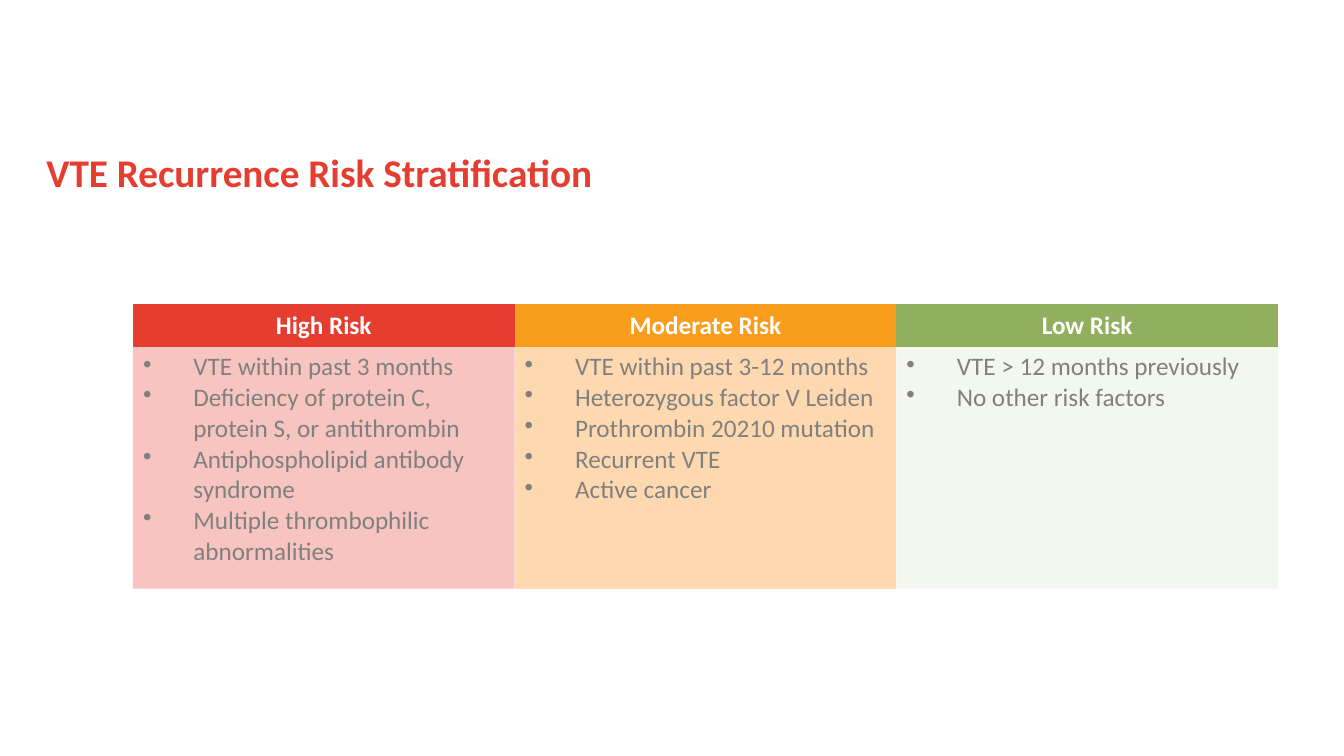
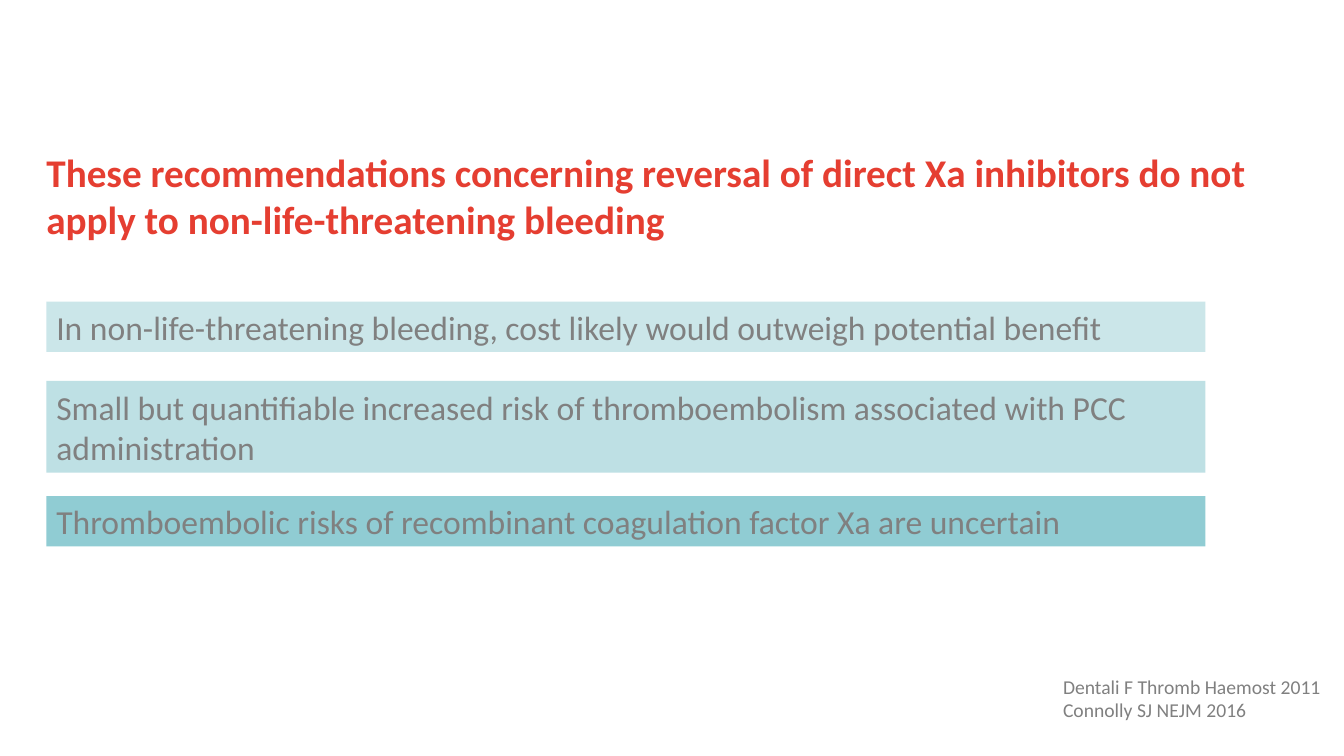
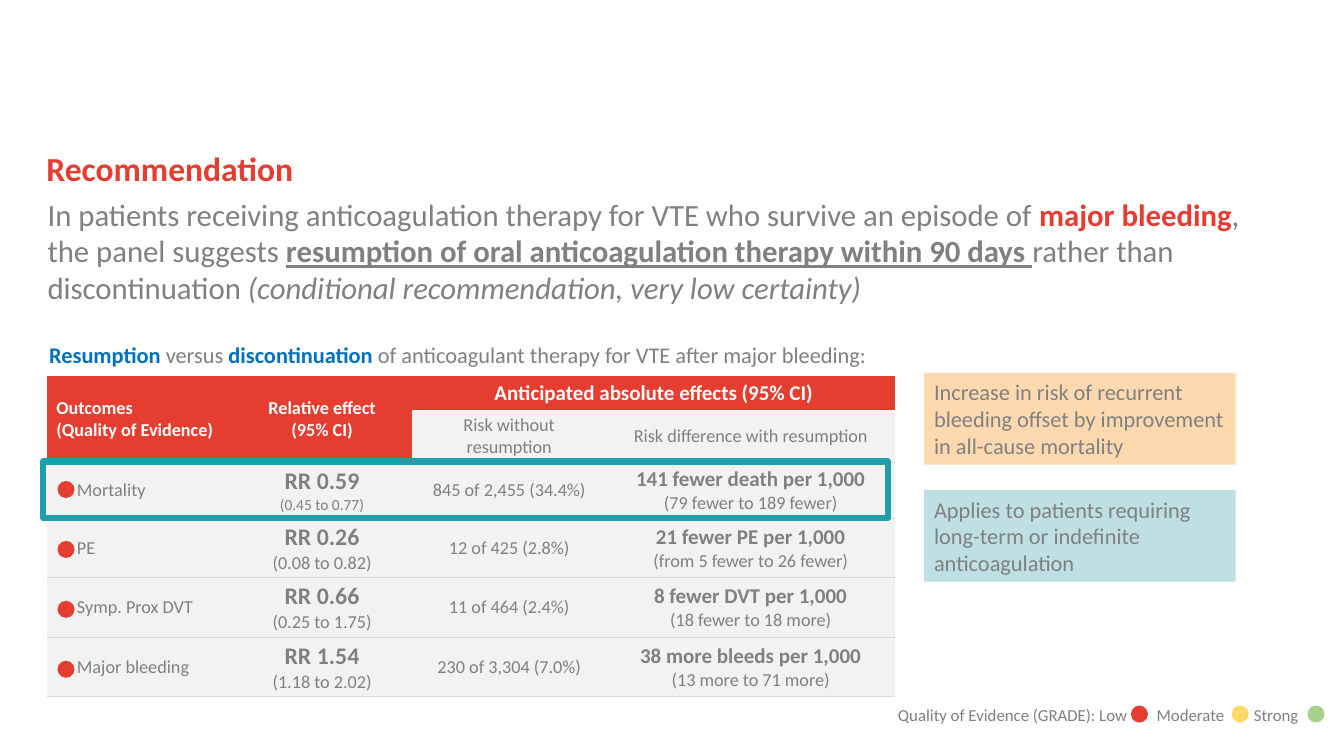
import collections
import dataclasses

import lxml.etree
import pptx
import pptx.dml.color
import pptx.enum.shapes
import pptx.enum.text
import pptx.oxml.ns
import pptx.util

Cm = pptx.util.Cm
Box = collections.namedtuple("Box", "left top width height")
Paragraph = collections.namedtuple(
    "Paragraph", "runs centred indent hanging bullet tabs", defaults=(False, 0, 0, None, ()))


@dataclasses.dataclass(frozen=True)
class Theme:
    """Colours, type sizes and shared measures of the deck."""
    font: str = "Calibri"
    red: str = "E53E31"
    orange: str = "F99D1C"
    green: str = "91AF5F"
    pink: str = "E63E30"
    peach: str = "FED9B0"
    sage: str = "C9D7AF"
    ice: str = "BEE0E4"
    aqua: str = "90CCD3"
    teal: str = "1F9FAC"
    blue: str = "0070C0"
    grey: str = "808080"
    white: str = "FFFFFF"
    pale: str = "F2F2F2"
    rule: str = "D9D9D9"
    low: str = "E43E32"
    moderate: str = "FFD966"
    strong: str = "A9D18E"
    title: int = 28
    heading: int = 24
    statement: int = 24
    recommendation: int = 22
    risk: int = 18
    ratio: int = 17
    note: int = 16
    effect: int = 15
    source: int = 14
    cell: int = 13
    legend: int = 12
    small: int = 11
    dot: float = 0.43
    no_style: str = "{2D5ABB26-0587-4C30-8999-92F81FD0307C}"


THEME = Theme()
TITLE_BOX = Box(1.17, 3.73, 30.48, 1.98)


@dataclasses.dataclass(frozen=True)
class Run:
    """A stretch of text in one style."""
    text: str
    size: int
    color: str = THEME.grey
    bold: bool = False
    italic: bool = False
    underline: bool = False


def rgb(color):
    """Turn a hex string into a colour."""
    return pptx.dml.color.RGBColor.from_string(color)


def add_xml(parent, tag, **attributes):
    """Append a DrawingML element."""
    return lxml.etree.SubElement(parent, pptx.oxml.ns.qn(tag), attributes)


def lengths(box):
    """Convert a box in centimetres to lengths."""
    return [Cm(value) for value in box]


def paint(fill, color, opacity=100):
    """Fill with a solid colour at the given opacity in percent."""
    fill.solid()
    fill.fore_color.rgb = rgb(color)
    if opacity < 100:
        srgb = fill._xPr.find(".//" + pptx.oxml.ns.qn("a:srgbClr"))
        add_xml(srgb, "a:alpha", val=str(opacity * 1000))


def write(frame, paragraphs):
    """Write paragraphs into a text frame, run by run."""
    align = pptx.enum.text.PP_ALIGN
    for index, content in enumerate(paragraphs):
        line = frame.paragraphs[0] if index == 0 else frame.add_paragraph()
        properties = line._p.get_or_add_pPr()
        if content.indent:
            properties.set("marL", str(Cm(content.indent)))
            properties.set("indent", str(Cm(content.hanging)))
        if content.bullet:
            add_xml(properties, "a:buChar", char=content.bullet)
        if content.tabs:
            stops = add_xml(properties, "a:tabLst")
            for position in content.tabs:
                add_xml(stops, "a:tab", pos=str(Cm(position)), algn="l")
        line.alignment = align.CENTER if content.centred else align.LEFT
        for part in content.runs:
            run = line.add_run()
            run.text = part.text
            run.font.name = THEME.font
            run.font.size = pptx.util.Pt(part.size)
            run.font.color.rgb = rgb(part.color)
            run.font.bold = part.bold
            run.font.italic = part.italic
            run.font.underline = part.underline


def add_text(slide, box, paragraphs, inset=True):
    """Place a wrapping text box."""
    frame = slide.shapes.add_textbox(*lengths(box)).text_frame
    frame.word_wrap = True
    if not inset:
        frame.margin_left = frame.margin_right = 0
        frame.margin_top = frame.margin_bottom = 0
    write(frame, paragraphs)


def add_title(slide, box, text, size=THEME.title):
    """Place the red slide title."""
    add_text(slide, box, [Paragraph([Run(text, size, THEME.red, True)])], inset=False)


def add_flat_shape(slide, kind, box):
    """Place a preset shape without shadow."""
    shape = slide.shapes.add_shape(kind, *lengths(box))
    shape.shadow.inherit = False
    return shape


def add_panel(slide, box, text, size, color, opacity=100):
    """Place a tinted panel with left-aligned text."""
    panel = add_flat_shape(slide, pptx.enum.shapes.MSO_SHAPE.RECTANGLE, box)
    paint(panel.fill, color, opacity)
    panel.line.fill.background()
    panel.text_frame.word_wrap = True
    panel.text_frame.vertical_anchor = pptx.enum.text.MSO_ANCHOR.MIDDLE
    write(panel.text_frame, [Paragraph([Run(text, size)])])


def add_dot(slide, left, top, color):
    """Place an evidence-quality dot."""
    dot = add_flat_shape(slide, pptx.enum.shapes.MSO_SHAPE.OVAL, Box(left, top, THEME.dot, THEME.dot))
    paint(dot.fill, color)
    dot.line.fill.background()


def add_plain_table(slide, box, widths, heights):
    """Place a table without style or banding."""
    frame = slide.shapes.add_table(len(heights), len(widths), *lengths(box))
    table = frame.table
    table.first_row = table.horz_banding = False
    table._tbl.tblPr.find(pptx.oxml.ns.qn("a:tableStyleId")).text = THEME.no_style
    for column, width in zip(table.columns, widths):
        column.width = Cm(width)
    for row, height in zip(table.rows, heights):
        row.height = Cm(height)
    return table


def add_rule(cell, side):
    """Draw a thin grey border on one side of a cell."""
    border = add_xml(cell._tc.get_or_add_tcPr(), side, w=str(pptx.util.Pt(1)))
    add_xml(add_xml(border, "a:solidFill"), "a:srgbClr", val=THEME.rule)


def fill_cell(cell, paragraphs, color, opacity=100, middle=True):
    """Colour a cell and write its text."""
    paint(cell.fill, color, opacity)
    anchor = pptx.enum.text.MSO_ANCHOR
    cell.vertical_anchor = anchor.MIDDLE if middle else anchor.TOP
    write(cell.text_frame, paragraphs)


def risk_table(slide, box, groups):
    """Place one column of bulleted factors for each risk group."""
    header = 1.07
    widths = [box.width / len(groups)] * len(groups)
    table = add_plain_table(slide, box, widths, [header, box.height - header])
    for column, (name, color, tint, opacity, factors) in enumerate(groups):
        heading = Paragraph([Run(name, THEME.risk, THEME.white, True)], centred=True)
        fill_cell(table.cell(0, column), [heading], color)
        bullets = [Paragraph([Run(factor, THEME.risk)], indent=1.27, hanging=-1.27, bullet="•")
                   for factor in factors]
        fill_cell(table.cell(1, column), bullets, tint, opacity, middle=False)


def evidence_table(slide, box, outcomes):
    """Place the outcomes table with its dots and highlighted first outcome."""
    table = add_plain_table(slide, box, [4.65, 4.55, 4.88, 7.29],
                            [0.86, 1.32, 1.4] + [1.5] * (len(outcomes) - 1))
    table.cell(0, 0).merge(table.cell(1, 0))
    table.cell(0, 1).merge(table.cell(1, 1))
    table.cell(0, 2).merge(table.cell(0, 3))

    def fill(row, column, lines, color, centred=True, indent=0):
        cell = table.cell(row, column)
        cell.margin_left = cell.margin_right = Cm(0.23)
        cell.margin_top = cell.margin_bottom = Cm(0.11)
        if row > 1:
            add_rule(cell, "a:lnT")
        if row > 0 or column < 2:
            add_rule(cell, "a:lnB")
        fill_cell(cell, [Paragraph([line], centred, indent) for line in lines], color)

    def label(text, size=THEME.cell):
        return Run(text, size, THEME.white, True)

    fill(0, 0, [label("Outcomes"), label("(Quality of Evidence)")], THEME.red, centred=False)
    fill(0, 1, [label("Relative effect"), label("(95% CI)")], THEME.red)
    fill(0, 2, [label("Anticipated absolute effects (95% CI)", THEME.effect)], THEME.red)
    fill(1, 2, [Run("Risk without resumption", THEME.cell)], THEME.pale)
    fill(1, 3, [Run("Risk difference with resumption", THEME.cell)], THEME.pale)
    for index, (outcome, ratio, interval, baseline, effect, spread) in enumerate(outcomes):
        row = index + 2
        interval_size = THEME.small if index == 0 else THEME.cell
        fill(row, 0, [Run(outcome, THEME.cell)], THEME.pale, centred=False, indent=0.52)
        fill(row, 1, [Run(ratio, THEME.ratio, bold=True), Run(interval, interval_size)], THEME.pale)
        fill(row, 2, [Run(baseline, THEME.cell)], THEME.pale)
        fill(row, 3, [Run(effect, THEME.effect, bold=True), Run(spread, THEME.cell)], THEME.pale)
        add_dot(slide, box.left + 0.26, box.top + 2.65 + 1.51 * index, THEME.low)

    highlight = add_flat_shape(slide, pptx.enum.shapes.MSO_SHAPE.RECTANGLE,
                               Box(box.left - 0.1, box.top + 2.16, box.width - 0.08, 1.42))
    highlight.fill.background()
    highlight.line.color.rgb = rgb(THEME.teal)
    highlight.line.width = pptx.util.Pt(4.5)


def grade_legend(slide, box):
    """Place the key to the evidence-quality dots."""
    key = Run("Quality of Evidence (GRADE): Low\tModerate\tStrong", THEME.legend)
    add_text(slide, box, [Paragraph([key], tabs=(6.52, 8.97))])
    for offset, color in ((6.12, THEME.low), (8.66, THEME.moderate), (10.57, THEME.strong)):
        add_dot(slide, box.left + offset, box.top + 0.15, color)


def stratification_slide(slide):
    """Build the risk stratification slide."""
    add_title(slide, TITLE_BOX, "VTE Recurrence Risk Stratification")
    risk_table(slide, Box(3.35, 7.67, 28.86, 7.16), [
        ("High Risk", THEME.red, THEME.pink, 30, [
            "VTE within past 3 months", "Deficiency of protein C, protein S, or antithrombin",
            "Antiphospholipid antibody syndrome", "Multiple thrombophilic abnormalities"]),
        ("Moderate Risk", THEME.orange, THEME.peach, 100, [
            "VTE within past 3-12 months", "Heterozygous factor V Leiden",
            "Prothrombin 20210 mutation", "Recurrent VTE", "Active cancer"]),
        ("Low Risk", THEME.green, THEME.sage, 20, [
            "VTE > 12 months previously", "No other risk factors"]),
    ])


def reversal_slide(slide):
    """Build the slide on reversal of Xa inhibitors."""
    add_title(slide, TITLE_BOX, "These recommendations concerning reversal of direct Xa inhibitors "
              "do not apply to non-life-threatening bleeding")
    statements = [
        (7.6, 1.27, THEME.ice, 79,
         "In non-life-threatening bleeding, cost likely would outweigh potential benefit"),
        (9.6, 2.31, THEME.ice, 100,
         "Small but quantifiable increased risk of thromboembolism associated with PCC administration"),
        (12.5, 1.27, THEME.aqua, 100,
         "Thromboembolic risks of recombinant coagulation factor Xa are uncertain"),
    ]
    for top, height, color, opacity, text in statements:
        add_panel(slide, Box(TITLE_BOX.left, top, 29.21, height), text,
                  THEME.statement, color, opacity)
    sources = ("Dentali F Thromb Haemost 2011", "Connolly SJ NEJM 2016")
    add_text(slide, Box(26.54, 16.87, 7.11, 1.45),
             [Paragraph([Run(source, THEME.source)]) for source in sources])


def recommendation_slide(slide):
    """Build the recommendation slide with its evidence."""
    add_title(slide, TITLE_BOX._replace(height=1.12), "Recommendation", THEME.heading)
    size = THEME.recommendation
    add_text(slide, Box(1.2, 4.92, 30.48, 2.29), [Paragraph([
        Run("In patients receiving anticoagulation therapy for VTE who survive an episode of ", size),
        Run("major bleeding", size, THEME.red, True),
        Run(", the panel suggests ", size),
        Run("resumption of oral anticoagulation therapy within 90 days ", size,
            bold=True, underline=True),
        Run("rather than discontinuation ", size),
        Run("(conditional recommendation, very low certainty)", size, italic=True),
    ])], inset=False)
    add_text(slide, Box(0.99, 8.46, 31.93, 0.94), [Paragraph([
        Run("Resumption ", THEME.note, THEME.blue, True),
        Run("versus ", THEME.note),
        Run("discontinuation ", THEME.note, THEME.blue, True),
        Run("of anticoagulant therapy for VTE after major bleeding:", THEME.note),
    ])])
    evidence_table(slide, Box(1.19, 9.47, 21.37, 8.13), [
        ("Mortality", "RR 0.59", "(0.45 to 0.77)", "845 of 2,455 (34.4%)",
         "141 fewer death per 1,000", "(79 fewer to 189 fewer)"),
        ("PE", "RR 0.26", "(0.08 to 0.82)", "12 of 425 (2.8%)",
         "21 fewer PE per 1,000", "(from 5 fewer to 26 fewer)"),
        ("Symp. Prox DVT", "RR 0.66", "(0.25 to 1.75)", "11 of 464 (2.4%)",
         "8 fewer DVT per 1,000", "(18 fewer to 18 more)"),
        ("Major bleeding", "RR 1.54", "(1.18 to 2.02)", "230 of 3,304 (7.0%)",
         "38 more bleeds per 1,000", "(13 more to 71 more)"),
    ])
    remarks = [
        ("Increase in risk of recurrent bleeding offset by improvement in all-cause mortality",
         THEME.peach),
        ("Applies to patients requiring long-term or indefinite anticoagulation", THEME.ice),
    ]
    for index, (text, color) in enumerate(remarks):
        add_panel(slide, Box(23.29, 9.4 + 2.95 * index, 7.85, 2.31), text, THEME.note, color)
    grade_legend(slide, Box(22.38, 17.63, 11.49, 0.76))


def main():
    """Build and save the deck."""
    deck = pptx.Presentation()
    deck.slide_width, deck.slide_height = Cm(33.87), Cm(19.05)
    blank = deck.slide_layouts[6]
    for build in (stratification_slide, reversal_slide, recommendation_slide):
        build(deck.slides.add_slide(blank))
    deck.save("out.pptx")


if __name__ == "__main__":
    main()
